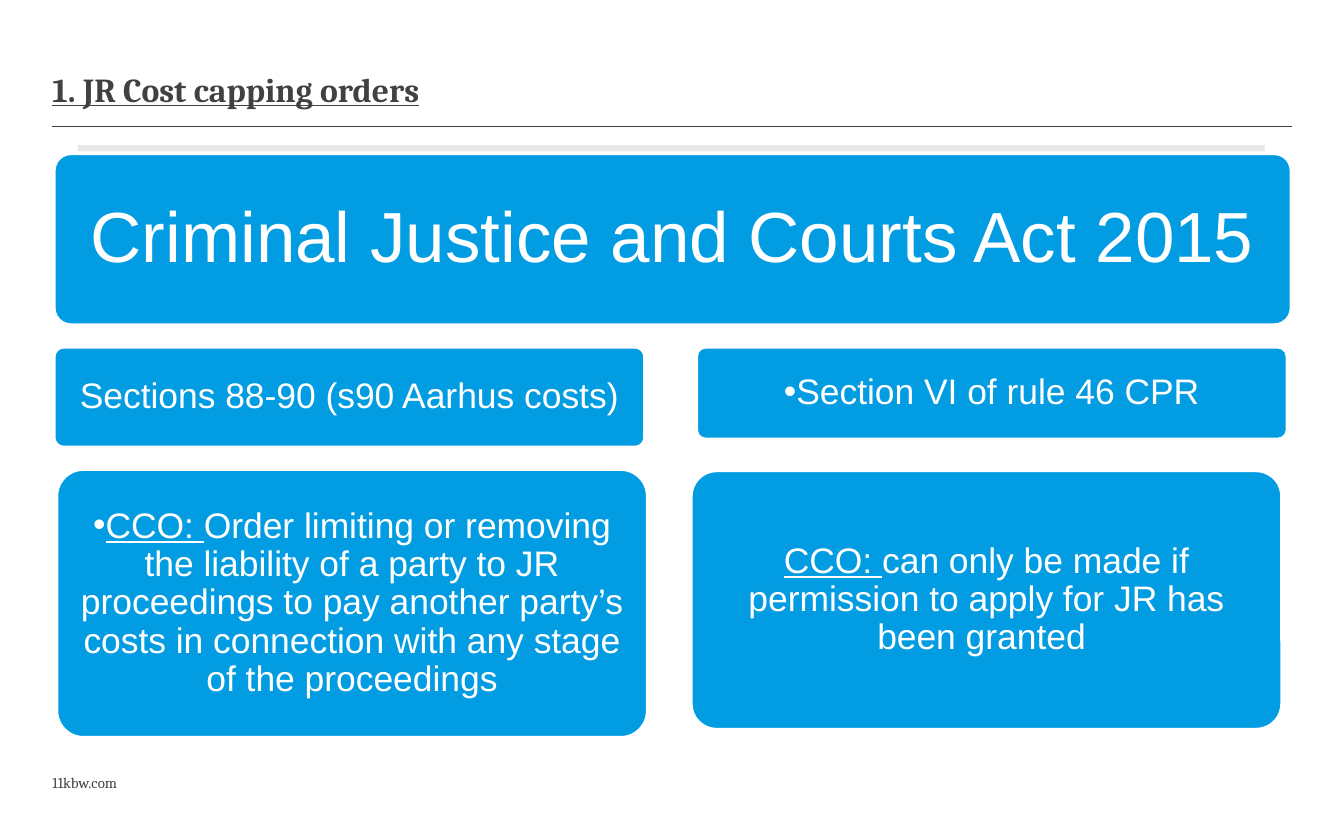
from pptx import Presentation
from pptx.dml.color import RGBColor
from pptx.enum.shapes import MSO_CONNECTOR, MSO_SHAPE
from pptx.enum.text import MSO_ANCHOR, MSO_AUTO_SIZE, PP_ALIGN
from pptx.oxml.ns import qn
from pptx.util import Inches, Pt
from lxml.etree import SubElement

INK = RGBColor(0x41, 0x40, 0x42)
PALE = RGBColor(0xE6, 0xE7, 0xE8)
BLUE = RGBColor(0x02, 0x9C, 0xE2)
WHITE = RGBColor(0xFF, 0xFF, 0xFF)

WIDTH, HEIGHT = 10, 6.25
MARGIN = 0.39
CARD_WIDTH = 4.4
ACT_BOX = (0.4, 1.14, 9.21, 1.28)
CARDS = [
    ((0.4, 2.58, CARD_WIDTH, 0.75), False,
     [("Sections 88-90 (s90 Aarhus costs)", False)]),
    ((0.42, 3.49, CARD_WIDTH, 2), True,
     [("CCO: ", True),
      ("Order limiting or removing the liability of a party to JR proceedings "
       "to pay another party’s costs in connection with any stage of the "
       "proceedings", False)]),
    ((5.18, 2.58, CARD_WIDTH, 0.69), True,
     [("Section VI of rule 46 CPR", False)]),
    ((5.14, 3.5, CARD_WIDTH, 1.93), False,
     [("CCO: ", True),
      ("can only be made if permission to apply for JR has been granted ", False)]),
]


def inches(box):
    return [Inches(length) for length in box]


def set_insets(frame, inset):
    frame.margin_left = frame.margin_right = Inches(inset)
    frame.margin_top = frame.margin_bottom = Inches(inset)
    frame.word_wrap = True
    frame.auto_size = MSO_AUTO_SIZE.NONE


def add_run(paragraph, text, size, color, face, bold=False, underline=False):
    run = paragraph.add_run()
    run.text = text
    font = run.font
    font.name, font.size, font.color.rgb = face, Pt(size), color
    font.bold, font.underline = bold, underline


def add_bullet(paragraph):
    properties = paragraph._p.get_or_add_pPr()
    properties.set("marL", "0")
    properties.set("indent", "0")
    SubElement(properties, qn("a:buFont"), typeface="Arial")
    SubElement(properties, qn("a:buChar"), char="•")


def place_heading(slide, box):
    left, top, width, height = box
    heading = slide.shapes.title
    heading.left, heading.top, heading.width, heading.height = inches(
        (left, top, 6.79, 0.35))
    frame = heading.text_frame
    set_insets(frame, 0)
    frame.vertical_anchor = MSO_ANCHOR.TOP
    paragraph = frame.paragraphs[0]
    paragraph.alignment = PP_ALIGN.LEFT
    add_run(paragraph, "1. JR Cost capping orders", 18, INK, "Cambria", True, True)

    bottom = top + height
    rule = slide.shapes.add_connector(
        MSO_CONNECTOR.STRAIGHT, *inches((left, bottom, left + width, bottom)))
    rule.line.color.rgb = INK
    rule.line.width = Pt(0.75)
    SubElement(rule._element.spPr, qn("a:effectLst"))

    band = slide.shapes.add_shape(
        MSO_SHAPE.RECTANGLE, *inches((0.58, 1.08, 8.83, 0.09)))
    band.shadow.inherit = False
    band.fill.solid()
    band.fill.fore_color.rgb = PALE
    band.line.fill.background()


def place_card(slide, box, runs, size, inset, bulleted=False):
    card = slide.shapes.add_shape(MSO_SHAPE.ROUNDED_RECTANGLE, *inches(box))
    card.adjustments[0] = 0.1
    card.shadow.inherit = False
    card.fill.solid()
    card.fill.fore_color.rgb = BLUE
    card.line.color.rgb = WHITE
    card.line.width = Pt(2)
    frame = card.text_frame
    set_insets(frame, inset)
    frame.vertical_anchor = MSO_ANCHOR.MIDDLE
    paragraph = frame.paragraphs[0]
    paragraph.alignment = PP_ALIGN.CENTER
    paragraph.line_spacing = 0.9
    if bulleted:
        add_bullet(paragraph)
    for text, underline in runs:
        add_run(paragraph, text, size, WHITE, "Arial", underline=underline)


def place_footer(slide, box):
    footer = slide.shapes.add_textbox(*inches(box))
    set_insets(footer.text_frame, 0)
    add_run(footer.text_frame.paragraphs[0], "11kbw.com", 8, INK, "Cambria")


def main():
    deck = Presentation()
    deck.slide_width, deck.slide_height = Inches(WIDTH), Inches(HEIGHT)
    slide = deck.slides.add_slide(deck.slide_layouts[5])
    place_heading(slide, (MARGIN, 0.51, WIDTH - 2 * MARGIN, 0.43))
    place_card(slide, ACT_BOX, [("Criminal Justice and Courts Act 2015 ", False)],
               38, 0.18)
    for box, bulleted, runs in CARDS:
        place_card(slide, box, runs, 19, 0.12, bulleted)
    place_footer(slide, (MARGIN, 5.76, CARD_WIDTH, 0.14))
    deck.save("out.pptx")


if __name__ == "__main__":
    main()
